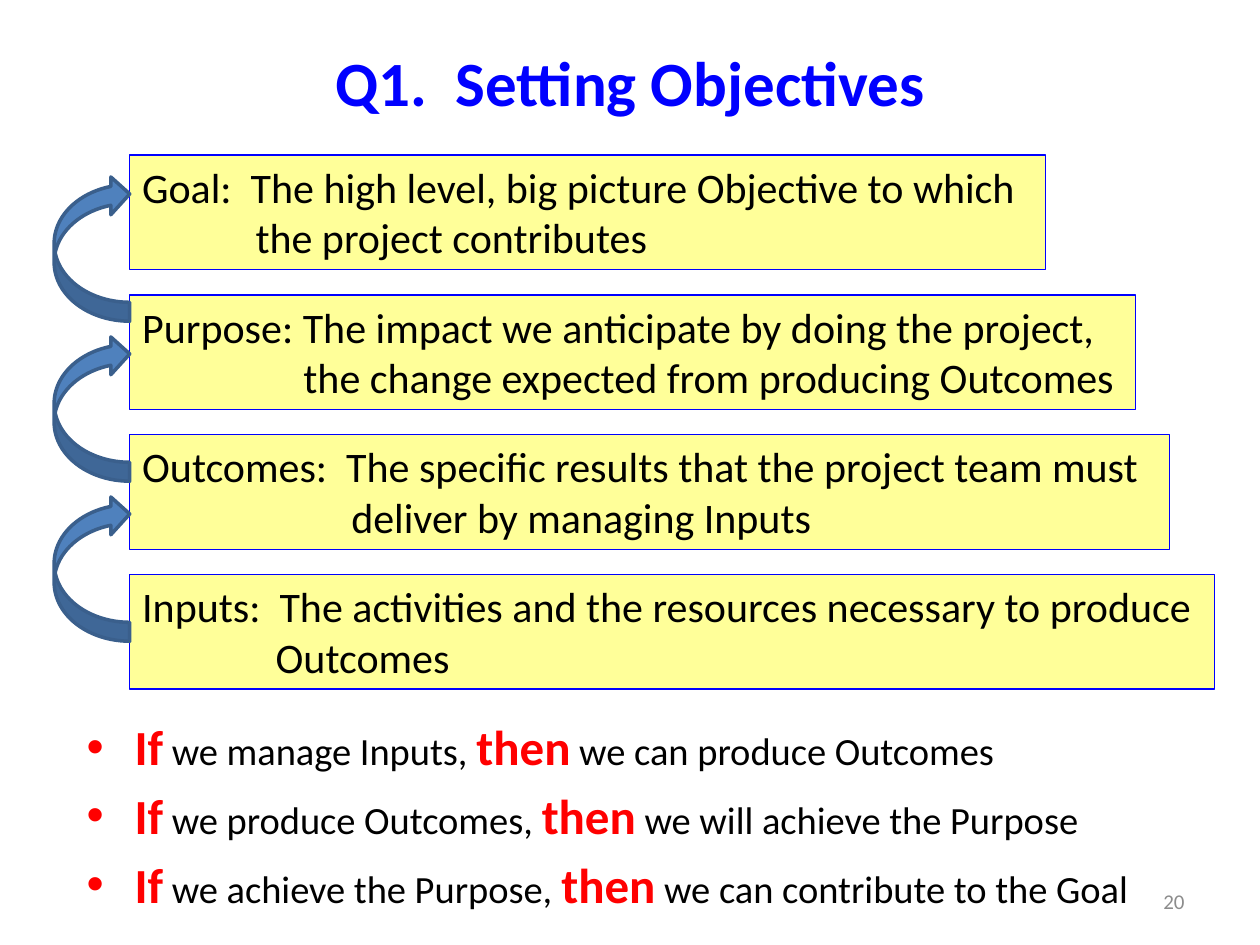
from dataclasses import dataclass

from lxml import etree
from pptx import Presentation
from pptx.dml.color import RGBColor
from pptx.enum.shapes import MSO_SHAPE
from pptx.enum.text import MSO_ANCHOR, PP_ALIGN
from pptx.oxml.ns import qn
from pptx.util import Inches, Pt

RECTANGLE = MSO_SHAPE.RECTANGLE
CURVED_ARROW = MSO_SHAPE.CURVED_RIGHT_ARROW
TOP, MIDDLE = MSO_ANCHOR.TOP, MSO_ANCHOR.MIDDLE
LEFT, CENTER, RIGHT = PP_ALIGN.LEFT, PP_ALIGN.CENTER, PP_ALIGN.RIGHT


@dataclass(frozen=True)
class Theme:
    font: str = "Calibri"
    blue: RGBColor = RGBColor(0x00, 0x00, 0xFF)
    red: RGBColor = RGBColor(0xFF, 0x00, 0x00)
    black: RGBColor = RGBColor(0x00, 0x00, 0x00)
    gray: RGBColor = RGBColor(0x8C, 0x8C, 0x8C)
    level_fill: RGBColor = RGBColor(0xFF, 0xFF, 0x99)
    arrow_fill: RGBColor = RGBColor(0x4F, 0x81, 0xBD)
    arrow_line: RGBColor = RGBColor(0x3A, 0x5F, 0x8C)
    title_size: int = 36
    keyword_size: int = 28
    level_size: int = 24
    logic_size: int = 22
    number_size: int = 12


theme = Theme()

# Grid, in inches
LEVEL_LEFT, LEVEL_TOP, LEVEL_HEIGHT, LEVEL_PITCH = 1.03, 1.23, 0.91, 1.11
ARROW_LEFT, ARROW_TOP, ARROW_PITCH = 0.43, 1.39, 1.27
ARROW_WIDTH, ARROW_HEIGHT = 0.6, 1.16
BULLET_INDENT = Inches(0.38)

# First line, second line, box width, second-line indent
levels = [
    ("Goal:  The high level, big picture Objective to which",
     "the project contributes", 7.27, 0.9),
    ("Purpose: The impact we anticipate by doing the project,",
     "the change expected from producing Outcomes", 7.98, 1.28),
    ("Outcomes:  The specific results that the project team must",
     "deliver by managing Inputs", 8.25, 1.66),
    ("Inputs:  The activities and the resources necessary to produce",
     "Outcomes", 8.61, 1.06),
]
logic = [
    ("we manage Inputs", "we can produce Outcomes"),
    ("we produce Outcomes", "we will achieve the Purpose"),
    ("we achieve the Purpose", "we can contribute to the Goal"),
]


def style(font, size, color, bold=False):
    font.name, font.size, font.bold = theme.font, Pt(size), bold
    font.color.rgb = color


def add_text(left, top, width, height, text, anchor, align):
    box = slide.shapes.add_textbox(*map(Inches, (left, top, width, height)))
    frame = box.text_frame
    frame.word_wrap = True
    frame.vertical_anchor = anchor
    frame.text = text
    for paragraph in frame.paragraphs:
        paragraph.alignment = align
    return frame


prs = Presentation()
prs.slide_width, prs.slide_height = Inches(10), Inches(7.5)
slide = prs.slides.add_slide(prs.slide_layouts[6])

title = add_text(0.5, 0.21, 9, 0.87, "Q1.  Setting Objectives", MIDDLE, CENTER)
style(title.paragraphs[0].runs[0].font, theme.title_size, theme.blue, True)

statements = add_text(0.59, 5.64, 9, 1.78, "\n" * (len(logic) - 1), TOP, LEFT)
for paragraph, (condition, result) in zip(statements.paragraphs, logic):
    paragraph.space_before = Pt(0.2 * theme.keyword_size)
    properties = paragraph._p.get_or_add_pPr()
    properties.set("marL", str(BULLET_INDENT))
    properties.set("indent", str(-BULLET_INDENT))
    etree.SubElement(properties, qn("a:buFont"), typeface="Arial")
    etree.SubElement(properties, qn("a:buChar"), char="•")
    for words, is_keyword in (("If", True), (f" {condition}, ", False),
                              ("then", True), (f" {result}", False)):
        run = paragraph.add_run()
        run.text = words
        if is_keyword:
            style(run.font, theme.keyword_size, theme.red, True)
        else:
            style(run.font, theme.logic_size, theme.black)

for row, (first_line, second_line, width, indent) in enumerate(levels):
    level = slide.shapes.add_shape(
        RECTANGLE, Inches(LEVEL_LEFT), Inches(LEVEL_TOP + row * LEVEL_PITCH),
        Inches(width), Inches(LEVEL_HEIGHT))
    level.shadow.inherit = False
    level.fill.solid()
    level.fill.fore_color.rgb = theme.level_fill
    level.line.color.rgb = theme.blue
    level.line.width = Pt(0.75)
    frame = level.text_frame
    frame.word_wrap = True
    frame.vertical_anchor = TOP
    frame.text = f"{first_line}\n{second_line}"
    for paragraph in frame.paragraphs:
        paragraph.alignment = LEFT
        style(paragraph.runs[0].font, theme.level_size, theme.black)
    frame.paragraphs[1]._p.get_or_add_pPr().set("marL", str(Inches(indent)))

for step in range(len(levels) - 1):
    arrow = slide.shapes.add_shape(
        CURVED_ARROW, Inches(ARROW_LEFT), Inches(ARROW_TOP + step * ARROW_PITCH),
        Inches(ARROW_WIDTH), Inches(ARROW_HEIGHT))
    arrow.shadow.inherit = False
    arrow.fill.solid()
    arrow.fill.fore_color.rgb = theme.arrow_fill
    arrow.line.color.rgb = theme.arrow_line
    arrow.line.width = Pt(2)
    arrow._element.spPr.find(qn("a:xfrm")).set("flipV", "1")

number = add_text(7.17, 6.95, 2.33, 0.4, "20", MIDDLE, RIGHT)
style(number.paragraphs[0].runs[0].font, theme.number_size, theme.gray)

prs.save("out.pptx")
